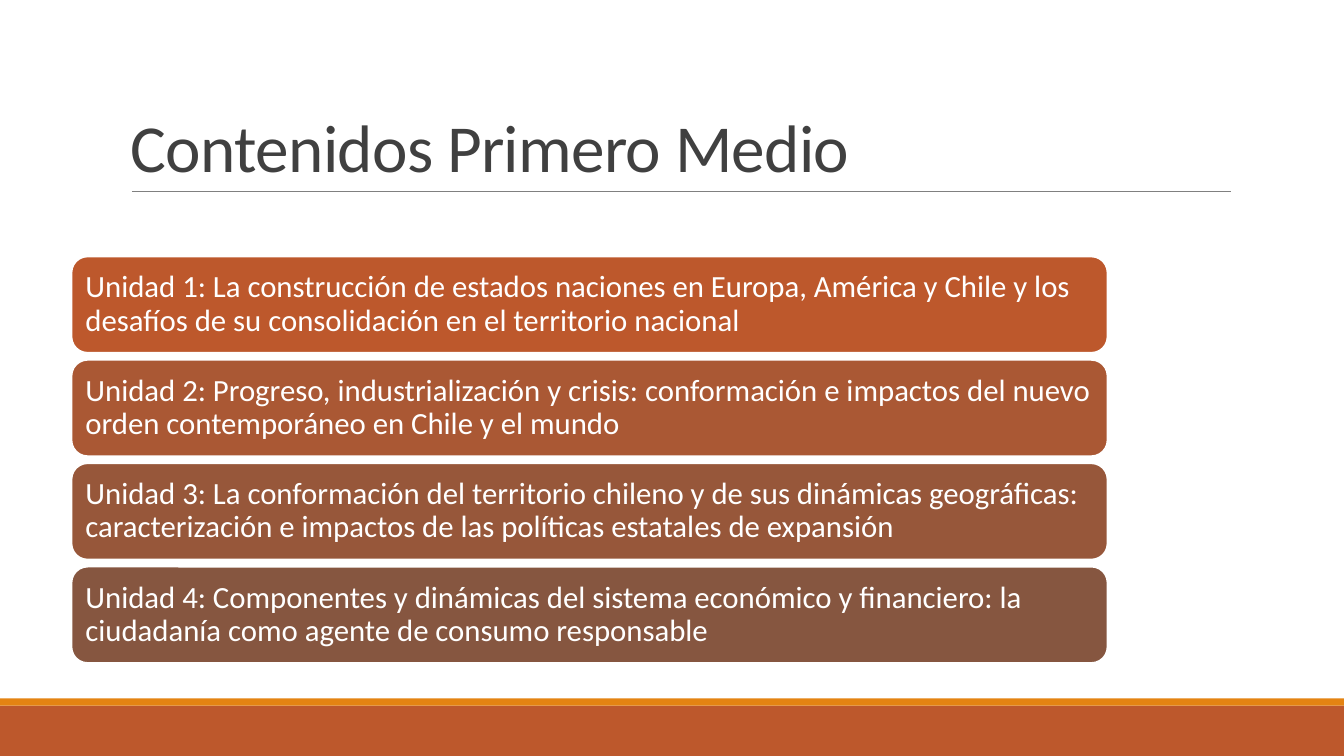
from pptx import Presentation
from pptx.dml.color import RGBColor
from pptx.enum import shapes, text
from pptx.oxml.xmlchemy import OxmlElement
from pptx.util import Pt

WHITE = RGBColor(0xFF, 0xFF, 0xFF)
DARK_GRAY = RGBColor(0x40, 0x40, 0x40)
RULE_GRAY = RGBColor(0x80, 0x80, 0x80)
ORANGE = RGBColor(0xE4, 0x83, 0x12)
RUST = RGBColor(0xBD, 0x58, 0x2C)
SIENNA = RGBColor(0xAA, 0x58, 0x34)
BROWN = RGBColor(0x97, 0x57, 0x3A)
UMBER = RGBColor(0x86, 0x56, 0x40)

FONT = "Calibri"
SLIDE_WIDTH = 960
UNIT_TOP = 183.2
UNIT_STEP = 73.85

UNITS = [
    (RUST, "Unidad 1: La construcción de estados naciones en Europa, América y Chile "
           "y los desafíos de su consolidación en el territorio nacional"),
    (SIENNA, "Unidad 2: Progreso, industrialización y crisis: conformación e impactos "
             "del nuevo orden contemporáneo en Chile y el mundo"),
    (BROWN, "Unidad 3: La conformación del territorio chileno y de sus dinámicas "
            "geográficas: caracterización e impactos de las políticas estatales de expansión"),
    (UMBER, "Unidad 4: Componentes y dinámicas del sistema económico y financiero: "
            "la ciudadanía como agente de consumo responsable"),
]


def add_filled_shape(slide, kind, left, top, width, height, color):
    shape = slide.shapes.add_shape(kind, Pt(left), Pt(top), Pt(width), Pt(height))
    shape.shadow.inherit = False
    shape.fill.solid()
    shape.fill.fore_color.rgb = color
    shape.line.fill.background()
    return shape


def write_text(shape, wording, size, color, line_spacing, anchor):
    frame = shape.text_frame
    frame.word_wrap = True
    frame.vertical_anchor = anchor
    paragraph = frame.paragraphs[0]
    paragraph.text = wording
    paragraph.alignment = text.PP_ALIGN.LEFT
    paragraph.line_spacing = line_spacing
    paragraph.font.name = FONT
    paragraph.font.size = Pt(size)
    paragraph.font.color.rgb = color
    return paragraph


def add_title(slide, wording):
    box = slide.shapes.add_textbox(Pt(86.4), Pt(22.6), Pt(792), Pt(114.2))
    paragraph = write_text(box, wording, 48, DARK_GRAY, 0.85, text.MSO_ANCHOR.BOTTOM)
    # Letter spacing is in hundredths of a point
    paragraph.runs[0].font._element.set("spc", "-50")


def add_title_rule(slide):
    rule = slide.shapes.add_connector(
        shapes.MSO_CONNECTOR.STRAIGHT, Pt(94.3), Pt(136.8), Pt(879), Pt(136.8))
    rule.line.color.rgb = RULE_GRAY
    rule.line.width = Pt(0.5)
    rule._element.spPr.append(OxmlElement("a:effectLst"))


def add_unit(slide, top, color, wording):
    bar = add_filled_shape(slide, shapes.MSO_SHAPE.ROUNDED_RECTANGLE,
                           51.1, top, 740, 68.8, color)
    bar.line.color.rgb = WHITE
    bar.line.width = Pt(1.25)
    frame = bar.text_frame
    frame.margin_left = frame.margin_right = Pt(6.6)
    frame.margin_top = frame.margin_bottom = Pt(6.6)
    write_text(bar, wording, 22, WHITE, 0.9, text.MSO_ANCHOR.MIDDLE)


def main():
    presentation = Presentation()
    presentation.slide_width = Pt(SLIDE_WIDTH)
    presentation.slide_height = Pt(540)
    slide = presentation.slides.add_slide(presentation.slide_layouts[6])

    add_title_rule(slide)
    rectangle = shapes.MSO_SHAPE.RECTANGLE
    add_filled_shape(slide, rectangle, 0, 504, SLIDE_WIDTH, 36, RUST)
    add_filled_shape(slide, rectangle, 0, 498.8, SLIDE_WIDTH, 5.2, ORANGE)
    add_title(slide, "Contenidos Primero Medio")
    for index, (color, wording) in enumerate(UNITS):
        add_unit(slide, UNIT_TOP + index * UNIT_STEP, color, wording)

    presentation.save("out.pptx")


if __name__ == "__main__":
    main()
